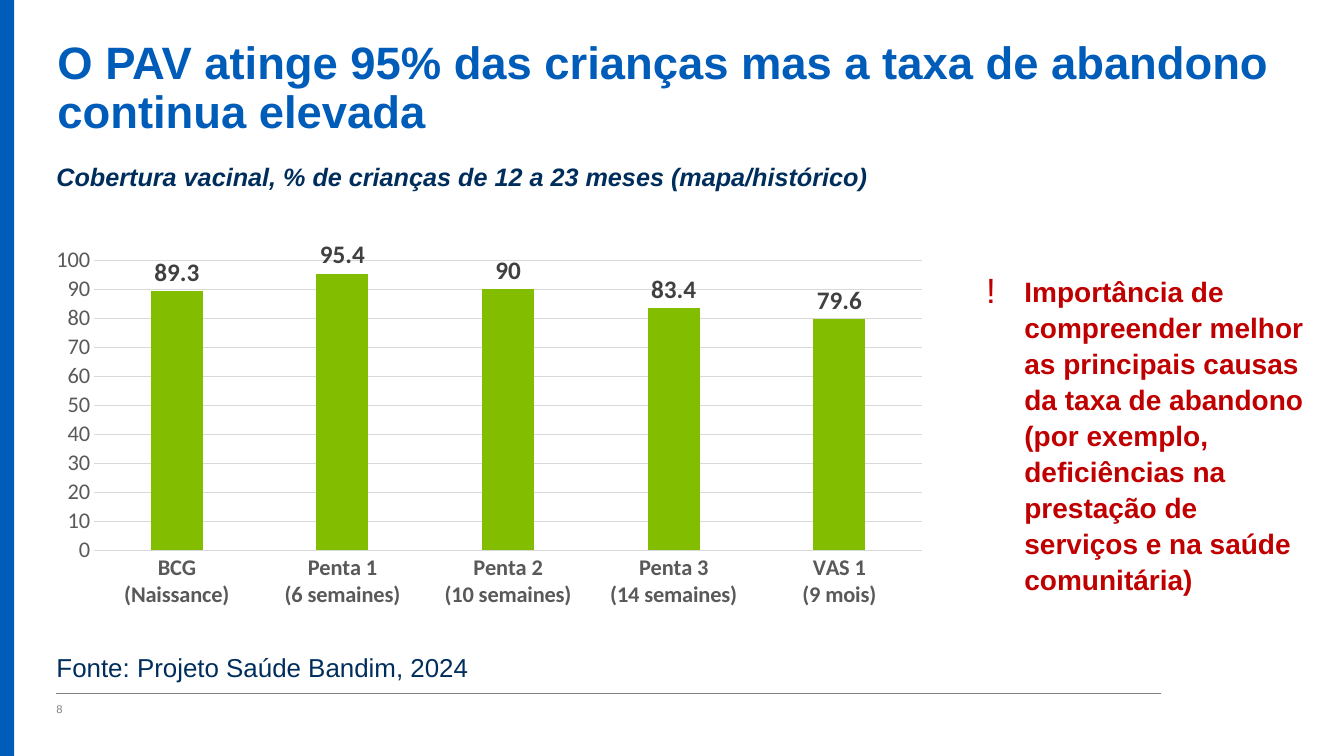
from dataclasses import dataclass

from lxml import etree
from pptx import Presentation
from pptx.chart.data import CategoryChartData
from pptx.dml.color import RGBColor
from pptx.enum.chart import XL_CHART_TYPE, XL_LABEL_POSITION, XL_TICK_MARK
from pptx.enum.shapes import MSO_CONNECTOR, MSO_SHAPE
from pptx.enum.text import MSO_ANCHOR, MSO_AUTO_SIZE, PP_ALIGN
from pptx.oxml import parse_xml
from pptx.oxml.ns import nsdecls, qn
from pptx.util import Pt

COLUMNS = XL_CHART_TYPE.COLUMN_CLUSTERED
LABEL_OUTSIDE = XL_LABEL_POSITION.OUTSIDE_END
NO_TICK = XL_TICK_MARK.NONE
STRAIGHT = MSO_CONNECTOR.STRAIGHT
RECTANGLE = MSO_SHAPE.RECTANGLE
TOP, BOTTOM = MSO_ANCHOR.TOP, MSO_ANCHOR.BOTTOM
NO_FIT = MSO_AUTO_SIZE.NONE
LEFT = PP_ALIGN.LEFT

EMU_PER_PX = 9144  # 100 px to the inch


@dataclass(frozen=True)
class Theme:
    text_font: str = "Arial"
    chart_font: str = "Calibri"
    blue: str = "005CB9"
    navy: str = "002E5C"
    red: str = "C00000"
    green: str = "83BD00"
    grey: str = "808080"
    axis_text: str = "595959"
    label_text: str = "404040"
    grid: str = "D9D9D9"
    title_size: float = 32.4
    subtitle_size: float = 18
    source_size: float = 18.5
    callout_size: float = 20
    number_size: float = 8
    axis_size: float = 16
    label_size: float = 18


THEME = Theme()


@dataclass(frozen=True)
class Box:
    left: int
    top: int
    width: int
    height: int

    def emu(self) -> tuple[int, ...]:
        return tuple(px * EMU_PER_PX for px in (self.left, self.top, self.width, self.height))


@dataclass(frozen=True)
class TextBlock:
    box: Box
    text: str
    size: float
    color: str
    bold: bool = False
    italic: bool = False
    line_spacing: float = 1.07
    space_after: float = 8
    anchor: MSO_ANCHOR = TOP
    bullet: str = ""


TITLE = TextBlock(
    Box(57, 40, 1220, 65),
    "O PAV atinge 95% das crianças mas a taxa de abandono continua elevada",
    THEME.title_size, THEME.blue, bold=True, line_spacing=0.9, space_after=0)
CALLOUT = TextBlock(
    Box(978, 270, 319, 317),
    "Importância de compreender melhor as principais causas da taxa de abandono "
    "(por exemplo, deficiências na prestação de serviços e na saúde comunitária)",
    THEME.callout_size, THEME.red, bold=True, space_after=12, bullet="!")
LOOSE_TEXTS = [
    TextBlock(Box(56, 158, 903, 32),
              "Cobertura vacinal, % de crianças de 12 a 23 meses (mapa/histórico)",
              THEME.subtitle_size, THEME.navy, bold=True, italic=True),
    TextBlock(Box(56, 644, 685, 32), "Fonte: Projeto Saúde Bandim, 2024",
              THEME.source_size, THEME.navy),
    TextBlock(Box(56, 695, 29, 15), "8", THEME.number_size, THEME.grey,
              line_spacing=1, space_after=0, anchor=BOTTOM),
]

CHART_BOX = Box(56, 197, 903, 420)
PLOT_AREA = {"x": 0.041, "y": 0.146, "w": 0.91, "h": 0.685}
COVERAGE = {
    "BCG\n(Naissance)": 89.3,
    "Penta 1\n(6 semaines)": 95.4,
    "Penta 2\n(10 semaines)": 90,
    "Penta 3\n(14 semaines)": 83.4,
    "VAS 1\n(9 mois)": 79.6,
}


def rgb(color: str) -> RGBColor:
    return RGBColor.from_string(color)


def set_font(font, name: str, size: float, color: str, bold=False, italic=False) -> None:
    font.name, font.size = name, Pt(size)
    font.bold, font.italic = bold, italic
    font.color.rgb = rgb(color)


def add_bullet(para, char: str, color: str) -> None:
    """Hang the paragraph on a coloured, enlarged bullet."""
    props = para._p.get_or_add_pPr()
    props.set("marL", str(38 * EMU_PER_PX))
    props.set("indent", str(-38 * EMU_PER_PX))
    for xml in (f'<a:buClr {nsdecls("a")}><a:srgbClr val="{color}"/></a:buClr>',
                f'<a:buSzPct {nsdecls("a")} val="125000"/>',
                f'<a:buFont {nsdecls("a")} typeface="{THEME.text_font}"/>',
                f'<a:buChar {nsdecls("a")} char="{char}"/>'):
        props.append(parse_xml(xml))


def fill_text(shape, block: TextBlock) -> None:
    shape.left, shape.top, shape.width, shape.height = block.box.emu()
    frame = shape.text_frame
    frame.margin_left = frame.margin_top = frame.margin_right = frame.margin_bottom = 0
    frame.word_wrap, frame.auto_size = True, NO_FIT
    frame.vertical_anchor = block.anchor
    frame.text = block.text
    para = frame.paragraphs[0]
    if block.bullet:
        add_bullet(para, block.bullet, block.color)
    para.alignment = LEFT
    para.line_spacing = block.line_spacing
    para.space_before, para.space_after = Pt(0), Pt(block.space_after)
    set_font(para.font, THEME.text_font, block.size, block.color, block.bold, block.italic)


def add_frame(page) -> None:
    """Draw the side band and the footer rule."""
    band = page.shapes.add_shape(RECTANGLE, *Box(0, 0, 14, 750).emu())
    band.shadow.inherit = False
    band.fill.solid()
    band.fill.fore_color.rgb = rgb(THEME.blue)
    band.line.fill.background()

    ends = (px * EMU_PER_PX for px in (56, 688, 1152, 688))
    rule = page.shapes.add_connector(STRAIGHT, *ends)
    rule.line.color.rgb = rgb(THEME.grey)
    rule.line.width = Pt(0.5)
    etree.SubElement(rule._element.spPr, qn("a:effectLst"))


def style_line(line) -> None:
    line.color.rgb = rgb(THEME.grid)
    line.width = Pt(0.75)


def place_plot(chart) -> None:
    """Fix the inner plot area as fractions of the chart."""
    area = chart.element.find(".//" + qn("c:plotArea"))
    for layout in area.findall(qn("c:layout")):
        area.remove(layout)
    settings = {"layoutTarget": "inner", "xMode": "edge", "yMode": "edge", **PLOT_AREA}
    parts = "".join(f'<c:{key} val="{value}"/>' for key, value in settings.items())
    area.insert(0, parse_xml(
        f'<c:layout {nsdecls("c")}><c:manualLayout>{parts}</c:manualLayout></c:layout>'))


def add_coverage_chart(page) -> None:
    data = CategoryChartData()
    data.categories = list(COVERAGE)
    data.add_series("Series 1", list(COVERAGE.values()))
    chart = page.shapes.add_chart(COLUMNS, *CHART_BOX.emu(), data).chart
    chart.has_title = chart.has_legend = False
    chart.font.name, chart.font.size = THEME.chart_font, Pt(THEME.axis_size)
    place_plot(chart)

    # Axes
    for axis, bold in ((chart.category_axis, True), (chart.value_axis, False)):
        axis.major_tick_mark = axis.minor_tick_mark = NO_TICK
        set_font(axis.tick_labels.font, THEME.chart_font, THEME.axis_size,
                 THEME.axis_text, bold)
    style_line(chart.category_axis.format.line)
    values = chart.value_axis
    values.minimum_scale, values.maximum_scale, values.major_unit = 0, 100, 10
    values.format.line.fill.background()
    style_line(values.major_gridlines.format.line)

    # Columns and their labels
    plot = chart.plots[0]
    plot.vary_by_categories = False
    plot.gap_width, plot.overlap = 219, -27
    fill = plot.series[0].format.fill
    fill.solid()
    fill.fore_color.rgb = rgb(THEME.green)
    labels = plot.series[0].data_labels
    labels.show_value, labels.position = True, LABEL_OUTSIDE
    set_font(labels.font, THEME.chart_font, THEME.label_size, THEME.label_text, bold=True)


def main() -> None:
    deck = Presentation()
    deck.slide_width, deck.slide_height = 1333 * EMU_PER_PX, 750 * EMU_PER_PX
    page = deck.slides.add_slide(deck.slide_layouts[1])
    add_frame(page)
    fill_text(page.shapes.title, TITLE)
    fill_text(page.placeholders[1], CALLOUT)
    add_coverage_chart(page)
    for block in LOOSE_TEXTS:
        fill_text(page.shapes.add_textbox(*block.box.emu()), block)
    deck.save("out.pptx")


if __name__ == "__main__":
    main()
